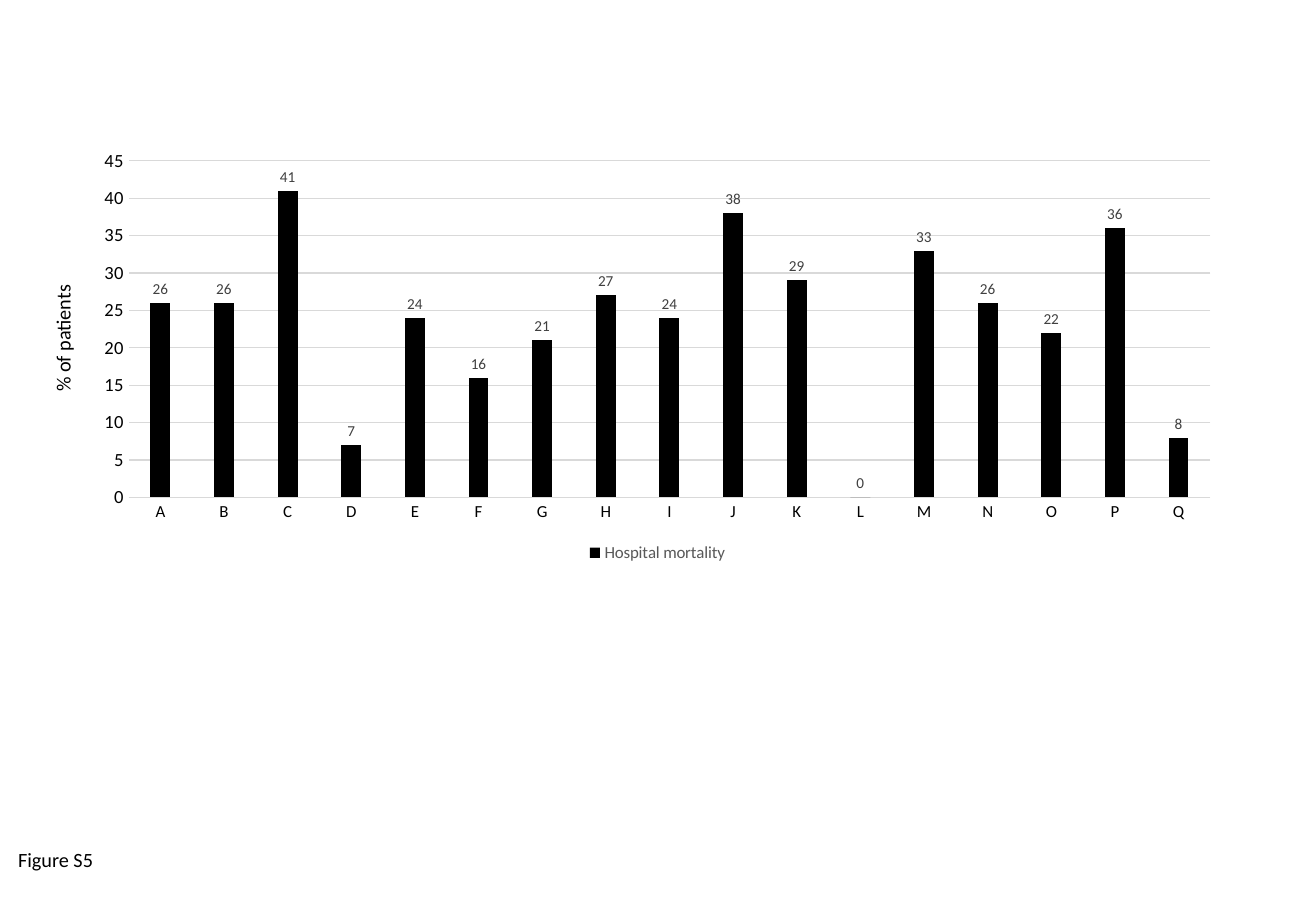
from pptx import Presentation
from pptx.chart.data import CategoryChartData
from pptx.dml.color import RGBColor
from pptx.enum.chart import XL_CHART_TYPE, XL_LABEL_POSITION, XL_LEGEND_POSITION, XL_TICK_MARK
from pptx.enum.text import MSO_AUTO_SIZE
from pptx.util import Inches, Pt

COLORS = {"black": "000000", "grid": "D9D9D9", "label": "404040", "legend": "595959"}
FONT = "Calibri"
HOSPITALS = "ABCDEFGHIJKLMNOPQ"
MORTALITY = [26, 26, 41, 7, 24, 16, 21, 27, 24, 38, 29, 0, 33, 26, 22, 36, 8]


def rgb(name):
    return RGBColor.from_string(COLORS[name])


def set_attrs(obj, values):
    for name, value in values.items():
        setattr(obj, name, value)


def style_font(font, size, color="black"):
    set_attrs(font, {"name": FONT, "size": Pt(size), "bold": False})
    font.color.rgb = rgb(color)


def style_line(line):
    line.color.rgb = rgb("grid")
    line.width = Pt(0.75)


def add_text(s, text, box, wrap=True, rotation=0):
    sp = s.shapes.add_textbox(*map(Inches, box))
    sp.rotation = rotation
    tf = sp.text_frame
    set_attrs(tf, {"word_wrap": wrap, "auto_size": MSO_AUTO_SIZE.SHAPE_TO_FIT_TEXT})
    r = tf.paragraphs[0].add_run()
    r.text = text
    style_font(r.font, 12)


def style_axes(chart):
    ticks = {"major_tick_mark": XL_TICK_MARK.NONE, "minor_tick_mark": XL_TICK_MARK.NONE}
    for axis, size in ((chart.category_axis, 10), (chart.value_axis, 11)):
        set_attrs(axis, ticks)
        style_font(axis.tick_labels.font, size)
    style_line(chart.category_axis.format.line)
    axis = chart.value_axis
    set_attrs(axis, {"minimum_scale": 0, "maximum_scale": 45, "major_unit": 5})
    set_attrs(axis.tick_labels, {"number_format": "0", "number_format_is_linked": False})
    axis.format.line.fill.background()
    style_line(axis.major_gridlines.format.line)


def add_column_chart(s, box):
    data = CategoryChartData(number_format="0")
    data.categories = list(HOSPITALS)
    data.add_series("Hospital mortality", MORTALITY)
    chart = s.shapes.add_chart(
        XL_CHART_TYPE.COLUMN_CLUSTERED, *map(Inches, box), data
    ).chart
    set_attrs(chart, {"has_title": False, "has_legend": True})
    style_font(chart.font, 10)
    set_attrs(chart.legend, {"position": XL_LEGEND_POSITION.BOTTOM, "include_in_layout": False})
    style_font(chart.legend.font, 10, "legend")
    style_axes(chart)

    plot = chart.plots[0]
    set_attrs(plot, {"gap_width": 219, "overlap": -27, "vary_by_categories": False})
    series = plot.series[0]
    series.format.fill.solid()
    series.format.fill.fore_color.rgb = rgb("black")
    labels = series.data_labels
    set_attrs(labels, {
        "show_value": True,
        "position": XL_LABEL_POSITION.OUTSIDE_END,
        "number_format": "0",
        "number_format_is_linked": False,
    })
    style_font(labels.font, 9, "label")


def main():
    prs = Presentation()
    set_attrs(prs, {"slide_width": Inches(10.83), "slide_height": Inches(7.5)})
    s = prs.slides.add_slide(prs.slide_layouts[6])
    add_column_chart(s, (0.67, 1.16, 9.48, 3.51))
    add_text(s, "Figure S5", (0.05, 6.93, 10.61, 0.3))
    add_text(s, "% of patients", (-0.03, 2.63, 1.09, 0.3), wrap=False, rotation=270)
    prs.save("out.pptx")


if __name__ == "__main__":
    main()
